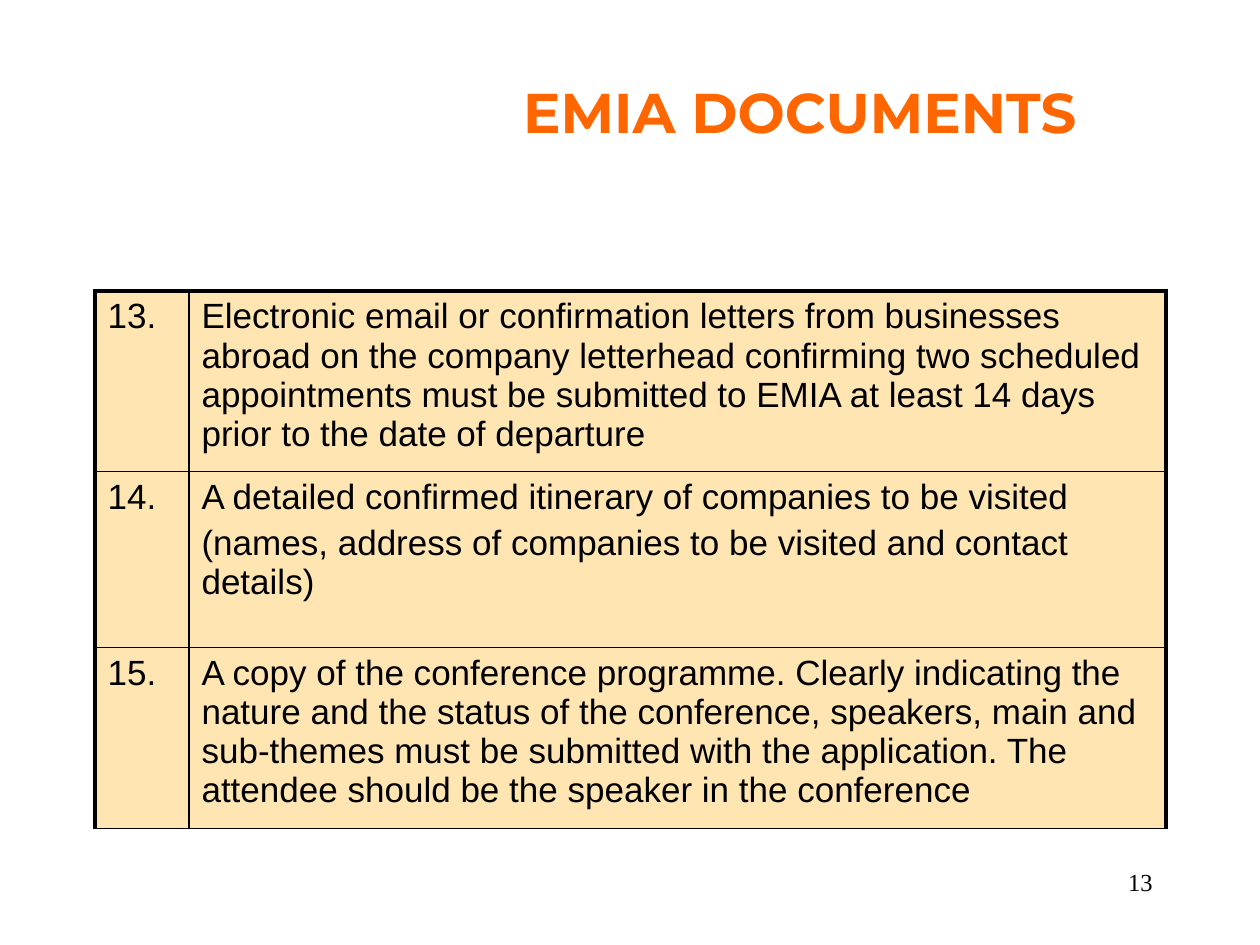
from pptx import Presentation
from pptx.dml.color import RGBColor
from pptx.enum.text import MSO_ANCHOR, MSO_AUTO_SIZE, PP_ALIGN
from pptx.oxml.ns import qn
from pptx.util import Emu, Pt
from lxml.etree import SubElement

BLACK = RGBColor(0, 0, 0)
ORANGE = RGBColor(0xFF, 0x66, 0x00)
AMBER = RGBColor(0xFF, 0xCC, 0x66)

TITLE = {"name": "Montserrat", "size": Pt(32), "bold": True}
BODY = {"name": "Arial", "size": Pt(20), "bold": False}
NUMBER = {"name": "Times New Roman", "size": Pt(14)}

COLS = [94, 977]
ROWS = [169, 176, 169]
THICK, THIN = 2.25, 1
ITEMS = [
    ("13.", "Electronic email or confirmation letters from businesses abroad "
     "on the company letterhead confirming two scheduled appointments must "
     "be submitted to EMIA at least 14 days prior to the date of departure"),
    ("14.", "A detailed confirmed itinerary of companies to be visited\n"
     "(names, address of companies to be visited and contact details)"),
    ("15.", "A copy of the conference programme. Clearly indicating the "
     "nature and the status of the conference, speakers, main and "
     "sub-themes must be submitted with the application. The attendee "
     "should be the speaker in the conference"),
]


def px(count):
    """Turn pixels into EMU."""
    return Emu(round(count * 914400 / 126))


def write(frame, text, style, color, align=PP_ALIGN.LEFT):
    """Fill a text frame with one paragraph per line of text."""
    frame.word_wrap = True
    frame.text = text
    for order, para in enumerate(frame.paragraphs):
        para.alignment = align
        if order:
            para.space_before = Pt(4)
        for key, value in style.items():
            setattr(para.font, key, value)
        para.font.color.rgb = color


def add_title(slide, text):
    """Place and format the slide title."""
    title = slide.shapes.title
    box = {"left": 343, "top": 32, "width": 914, "height": 158}
    for key, value in box.items():
        setattr(title, key, px(value))
    frame = title.text_frame
    frame.auto_size = MSO_AUTO_SIZE.NONE
    frame.vertical_anchor = MSO_ANCHOR.MIDDLE
    write(frame, text, TITLE, ORANGE, PP_ALIGN.CENTER)


def add_number(slide, text):
    """Add the page number."""
    box = slide.shapes.add_textbox(px(903), px(861), px(262), px(63))
    write(box.text_frame, text, NUMBER, BLACK, PP_ALIGN.RIGHT)


def tint(cell):
    """Give a cell its half-transparent fill."""
    cell.fill.solid()
    cell.fill.fore_color.rgb = AMBER
    color = cell._tc.tcPr.find(".//" + qn("a:srgbClr"))
    SubElement(color, qn("a:alpha"), val="50000")


def edge(cell, widths):
    """Draw the left, right, top and bottom borders of a cell."""
    props = cell._tc.get_or_add_tcPr()
    for order, (side, width) in enumerate(zip("LRTB", widths)):
        line = SubElement(props, qn("a:ln" + side), w=str(Pt(width)))
        solid = SubElement(line, qn("a:solidFill"))
        SubElement(solid, qn("a:srgbClr"), val=str(BLACK))
        props.insert(order, line)


def add_items(slide):
    """Add the table of numbered documents."""
    frame = slide.shapes.add_table(
        len(ROWS), len(COLS), px(95), px(291), px(sum(COLS)), px(sum(ROWS)))
    table = frame.table
    table.first_row = table.horz_banding = False
    for col, width in zip(table.columns, COLS):
        col.width = px(width)
    for i, (height, texts) in enumerate(zip(ROWS, ITEMS)):
        table.rows[i].height = px(height)
        for j, text in enumerate(texts):
            cell = table.cell(i, j)
            write(cell.text_frame, text, BODY, BLACK)
            tint(cell)
            edge(cell, (THIN if j else THICK, THICK if j else THIN,
                        THIN if i else THICK, THIN))


def main():
    """Build the slide and save it."""
    deck = Presentation()
    deck.slide_width, deck.slide_height = px(1260), px(945)
    slide = deck.slides.add_slide(deck.slide_layouts[5])
    add_number(slide, "13")
    add_title(slide, "EMIA DOCUMENTS")
    add_items(slide)
    deck.save("out.pptx")


if __name__ == "__main__":
    main()
